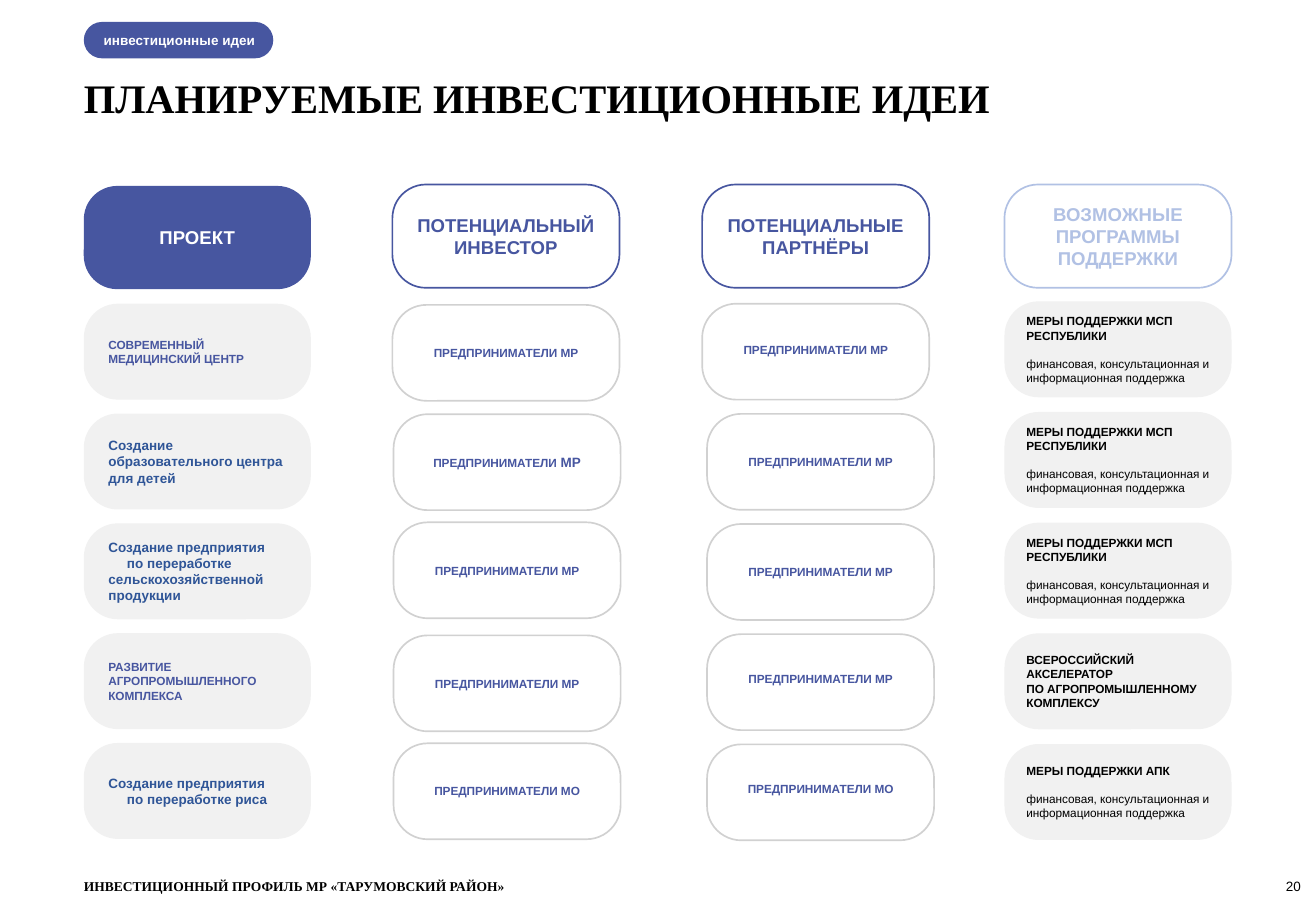
from pptx import Presentation
from pptx.dml.color import RGBColor
from pptx.enum.shapes import MSO_SHAPE
from pptx.enum.text import MSO_ANCHOR, MSO_AUTO_SIZE, PP_ALIGN
from pptx.util import Pt

BLUE, NAVY, PALE, GREY, LIGHT = "4756A0", "2F5597", "B1C1E4", "D1D1D1", "F1F1F1"
BLACK, WHITE = "000000", "FFFFFF"
CARD_W, CARD_H, HEADER_H = 134.6, 56.9, 61.2
CARD_ADJ, HEADER_ADJ = 0.356, 0.324
PROJECT_X, INVESTOR_X, PARTNER_X, SUPPORT_X = 49.7, 232.6, 416.2, 595.4
PROJECT_INSETS = (8.64, 3.6, 7.2, 3.6)
DEFAULT_INSETS = (7.2, 3.6, 7.2, 3.6)
NO_INSETS = (0, 0, 0, 0)
LEFT, CENTER, RIGHT = PP_ALIGN.LEFT, PP_ALIGN.CENTER, PP_ALIGN.RIGHT

HEADERS = [
    (PROJECT_X, 110.2, BLUE, None, WHITE, ["ПРОЕКТ"]),
    (INVESTOR_X, 109.4, None, BLUE, BLUE, ["ПОТЕНЦИАЛЬНЫЙ", "ИНВЕСТОР"]),
    (PARTNER_X, 109.4, None, BLUE, BLUE, ["ПОТЕНЦИАЛЬНЫЕ ПАРТНЁРЫ"]),
    (SUPPORT_X, 109.4, None, PALE, PALE, ["ВОЗМОЖНЫЕ ПРОГРАММЫ ПОДДЕРЖКИ"]),
]
PROJECTS = [
    (7, BLUE, ["СОВРЕМЕННЫЙ МЕДИЦИНСКИЙ ЦЕНТР"]),
    (8, NAVY, ["Создание образовательного центра для детей"]),
    (8, NAVY, ["Создание предприятия",
               ("по переработке сельскохозяйственной продукции", {"indent": 11})]),
    (7, BLUE, ["РАЗВИТИЕ АГРОПРОМЫШЛЕННОГО КОМПЛЕКСА"]),
    (8, NAVY, ["Создание предприятия", ("по переработке риса", {"indent": 11})]),
]
MR, MO = "ПРЕДПРИНИМАТЕЛИ МР", "ПРЕДПРИНИМАТЕЛИ МО"
INVESTORS = [
    (0, 180.7, MR),
    (0.7, 245.5, ("ПРЕДПРИНИМАТЕЛИ", {"tail": (" МР", 8)})),
    (0.7, 309.6, MR),
    (0.7, 376.6, MR),
    (0.7, 440.6, MO),
]
PARTNERS = [(0, 199.4, MR), (2.9, 265.7, MR), (2.9, 331.2, MR),
            (2.9, 394.6, MR), (2.9, 460.1, MO)]
HELP = ("финансовая, консультационная и информационная поддержка",
        {"bold": False, "space_before": 8.2})
REPUBLIC = ["МЕРЫ ПОДДЕРЖКИ МСП РЕСПУБЛИКИ", HELP]
SUPPORT = [REPUBLIC, REPUBLIC, REPUBLIC,
           ["ВСЕРОССИЙСКИЙ АКСЕЛЕРАТОР", "ПО АГРОПРОМЫШЛЕННОМУ КОМПЛЕКСУ"],
           ["МЕРЫ ПОДДЕРЖКИ АПК", HELP]]


def rgb(value):
    return RGBColor.from_string(value)


def set_all(target, values):
    for name, value in values.items():
        setattr(target, name, value)


def add_run(p, text, size, color, bold, font):
    r = p.add_run()
    r.text = text
    set_all(r.font, {"size": Pt(size), "bold": bold, "name": font})
    r.font.color.rgb = rgb(color)


def write(sp, lines, size, color, align=LEFT, bold=True, font="Arial",
          insets=DEFAULT_INSETS, anchor=MSO_ANCHOR.MIDDLE, wrap=True):
    tf = sp.text_frame
    sides = ("margin_left", "margin_top", "margin_right", "margin_bottom")
    set_all(tf, {"word_wrap": wrap, "vertical_anchor": anchor})
    set_all(tf, {side: Pt(inset) for side, inset in zip(sides, insets)})
    for i, line in enumerate(lines):
        text, extra = (line, {}) if isinstance(line, str) else line
        p = tf.add_paragraph() if i else tf.paragraphs[0]
        set_all(p, {"alignment": align, "space_before": Pt(extra.get("space_before", 0))})
        if "indent" in extra:
            p._p.get_or_add_pPr().set("indent", str(Pt(extra["indent"])))
        add_run(p, text, size, color, extra.get("bold", bold), font)
        if "tail" in extra:
            tail, tail_size = extra["tail"]
            add_run(p, tail, tail_size, color, bold, font)


def add_card(s, x, y, w, h, adj, fill=None, line=None):
    sp = s.shapes.add_shape(MSO_SHAPE.ROUNDED_RECTANGLE, Pt(x), Pt(y), Pt(w), Pt(h))
    sp.adjustments[0] = adj
    sp.shadow.inherit = False
    if fill:
        sp.fill.solid()
        sp.fill.fore_color.rgb = rgb(fill)
    else:
        sp.fill.background()
    if line:
        sp.line.color.rgb = rgb(line)
        sp.line.width = Pt(1)
    else:
        sp.line.fill.background()
    return sp


def add_label(s, x, y, w, h, text, size, color, grow=True, **options):
    sp = s.shapes.add_textbox(Pt(x), Pt(y), Pt(w), Pt(h))
    write(sp, [text], size, color, **{"anchor": MSO_ANCHOR.TOP, **options})
    if grow:
        sp.text_frame.auto_size = MSO_AUTO_SIZE.SHAPE_TO_FIT_TEXT


def add_frame(s):
    serif = {"font": "Times New Roman", "insets": NO_INSETS}
    add_label(s, PROJECT_X, 43.2, 721.4, 28.8, "ПЛАНИРУЕМЫЕ ИНВЕСТИЦИОННЫЕ ИДЕИ",
              24, BLACK, **serif)
    tag = add_card(s, PROJECT_X, 13, 112.3, 21.6, 0.5, fill=BLUE)
    write(tag, ["инвестиционные идеи"], 8, WHITE, insets=(8.64, 0, 0, 0))
    add_label(s, PROJECT_X, 520.6, 576, 9.4,
              "ИНВЕСТИЦИОННЫЙ ПРОФИЛЬ МР «ТАРУМОВСКИЙ РАЙОН»", 8, BLACK, **serif)
    add_label(s, 713.5, 520.6, 57.6, 9.4, "20", 8, BLACK, grow=False, align=RIGHT,
              bold=False, insets=NO_INSETS, anchor=MSO_ANCHOR.BOTTOM)


def add_columns(s):
    for x, y, fill, line, color, lines in HEADERS:
        sp = add_card(s, x, y, CARD_W, HEADER_H, HEADER_ADJ, fill, line)
        write(sp, lines, 11, color, CENTER)
    for row, (size, color, lines) in enumerate(PROJECTS):
        sp = add_card(s, PROJECT_X, 180 + 65.1 * row, CARD_W, CARD_H, CARD_ADJ, fill=LIGHT)
        write(sp, lines, size, color, insets=PROJECT_INSETS)
    for shift, y, line in INVESTORS:
        sp = add_card(s, INVESTOR_X + shift, y, CARD_W, CARD_H, CARD_ADJ, line=GREY)
        write(sp, [line], 7, BLUE, CENTER)
    for row, (shift, label_y, text) in enumerate(PARTNERS):
        x = PARTNER_X + shift
        add_card(s, x, 180 + 65.3 * row, CARD_W, CARD_H, CARD_ADJ, line=GREY)
        add_label(s, x + 16.5, label_y, 101.6, 15.8, text, 7, BLUE,
                  align=CENTER, wrap=False)
    for row, lines in enumerate(SUPPORT):
        sp = add_card(s, SUPPORT_X, 178.6 + 65.6 * row, CARD_W, CARD_H, CARD_ADJ, fill=LIGHT)
        write(sp, lines, 7, BLACK)


def main():
    prs = Presentation()
    set_all(prs, {"slide_width": Pt(780), "slide_height": Pt(540)})
    s = prs.slides.add_slide(prs.slide_layouts[6])
    add_frame(s)
    add_columns(s)
    prs.save("out.pptx")


if __name__ == "__main__":
    main()
